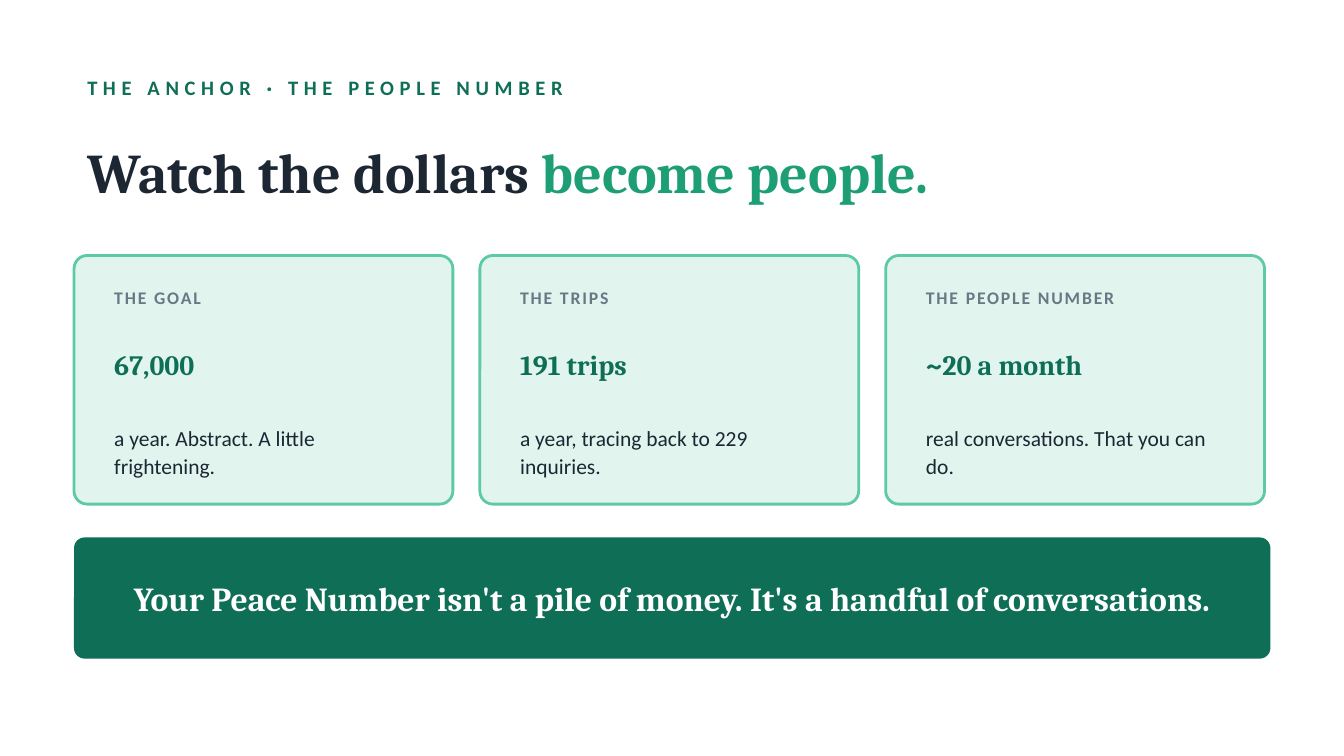
import pptx
import pptx.util
import pptx.dml.color
import pptx.enum.shapes
import pptx.enum.text
from pptx.util import Cm

COLORS = {
    "green": "0F6E56",
    "accent": "1D9E75",
    "ink": "1C2733",
    "muted": "6B7785",
    "mint": "E1F5EE",
    "edge": "5DCAA5",
    "white": "FFFFFF",
}
HEADING_FONT = "Cambria"
BODY_FONT = "Calibri"


def rgb(name):
    return pptx.dml.color.RGBColor.from_string(COLORS[name])


def add_text(slide, box, pieces, font_name, size, bold=True, tracking=0):
    frame = slide.shapes.add_textbox(*box).text_frame
    frame.word_wrap = True
    frame.vertical_anchor = pptx.enum.text.MSO_ANCHOR.MIDDLE
    paragraph = frame.paragraphs[0]
    for words, color in pieces:
        run = paragraph.add_run()
        run.text = words
        run.font.name = font_name
        run.font.size = pptx.util.Pt(size)
        run.font.bold = bold
        run.font.color.rgb = rgb(color)
        if tracking:
            run.font._element.set("spc", str(tracking * 100))
    return paragraph


def add_panel(slide, box, fill, corner, edge=None):
    panel = slide.shapes.add_shape(
        pptx.enum.shapes.MSO_SHAPE.ROUNDED_RECTANGLE, *box)
    panel.adjustments[0] = corner / min(box[2:])
    panel.shadow.inherit = False
    panel.fill.solid()
    panel.fill.fore_color.rgb = rgb(fill)
    if edge:
        panel.line.color.rgb = rgb(edge)
        panel.line.width = pptx.util.Pt(1.5)
    else:
        panel.line.fill.background()


def add_header(slide, box):
    left, top, width, height = box
    kicker_height = Cm(0.76)
    title_top = Cm(0.89)
    add_text(slide, (left, top, width, kicker_height),
             [("THE ANCHOR · THE PEOPLE NUMBER", "green")],
             BODY_FONT, 11, tracking=3)
    add_text(slide, (left, top + title_top, width, height - title_top),
             [("Watch the dollars ", "ink"), ("become people.", "accent")],
             HEADING_FONT, 30)


def add_card(slide, box, label, figure, meaning):
    left, top, width, height = box
    add_panel(slide, box, "mint", Cm(0.25), "edge")
    inner_left, inner_width = left + Cm(0.51), width - Cm(0.94)
    add_text(slide, (inner_left, top + Cm(0.41), inner_width, Cm(0.76)),
             [(label, "muted")], BODY_FONT, 9.5, tracking=1)
    add_text(slide, (inner_left, top + Cm(1.17), inner_width, Cm(1.78)),
             [(figure, "green")], HEADING_FONT, 15)
    explanation = add_text(
        slide, (inner_left, top + Cm(3), inner_width, Cm(1.4)),
        [(meaning, "ink")], BODY_FONT, 11.5, bold=False)
    explanation.line_spacing = 1.08


def add_card_row(slide, box, cards):
    left, top, width, height = box
    gap = Cm(0.51)
    card_width = (width - gap * (len(cards) - 1)) // len(cards)
    for index, card in enumerate(cards):
        card_left = left + index * (card_width + gap)
        add_card(slide, (card_left, top, card_width, height), *card)


def add_takeaway(slide, box):
    left, top, width, height = box
    margin = Cm(0.64)
    add_panel(slide, box, "green", Cm(0.2))
    message = add_text(
        slide, (left + margin, top, width - 2 * margin, height),
        [("Your Peace Number isn't a pile of money. "
          "It's a handful of conversations.", "white")],
        HEADING_FONT, 18)
    message.alignment = pptx.enum.text.PP_ALIGN.CENTER


def main():
    deck = pptx.Presentation()
    deck.slide_width, deck.slide_height = Cm(25.4), Cm(14.29)
    slide = deck.slides.add_slide(deck.slide_layouts[6])
    left, width = Cm(1.4), Cm(22.61)
    add_header(slide, (left, Cm(1.27), width, Cm(3.05)))
    add_card_row(slide, (left, Cm(4.83), Cm(22.5), Cm(4.7)), [
        ("THE GOAL", "67,000", "a year. Abstract. A little frightening."),
        ("THE TRIPS", "191 trips", "a year, tracing back to 229 inquiries."),
        ("THE PEOPLE NUMBER", "~20 a month",
         "real conversations. That you can do."),
    ])
    add_takeaway(slide, (left, Cm(10.16), width, Cm(2.29)))
    deck.save("out.pptx")


if __name__ == "__main__":
    main()
